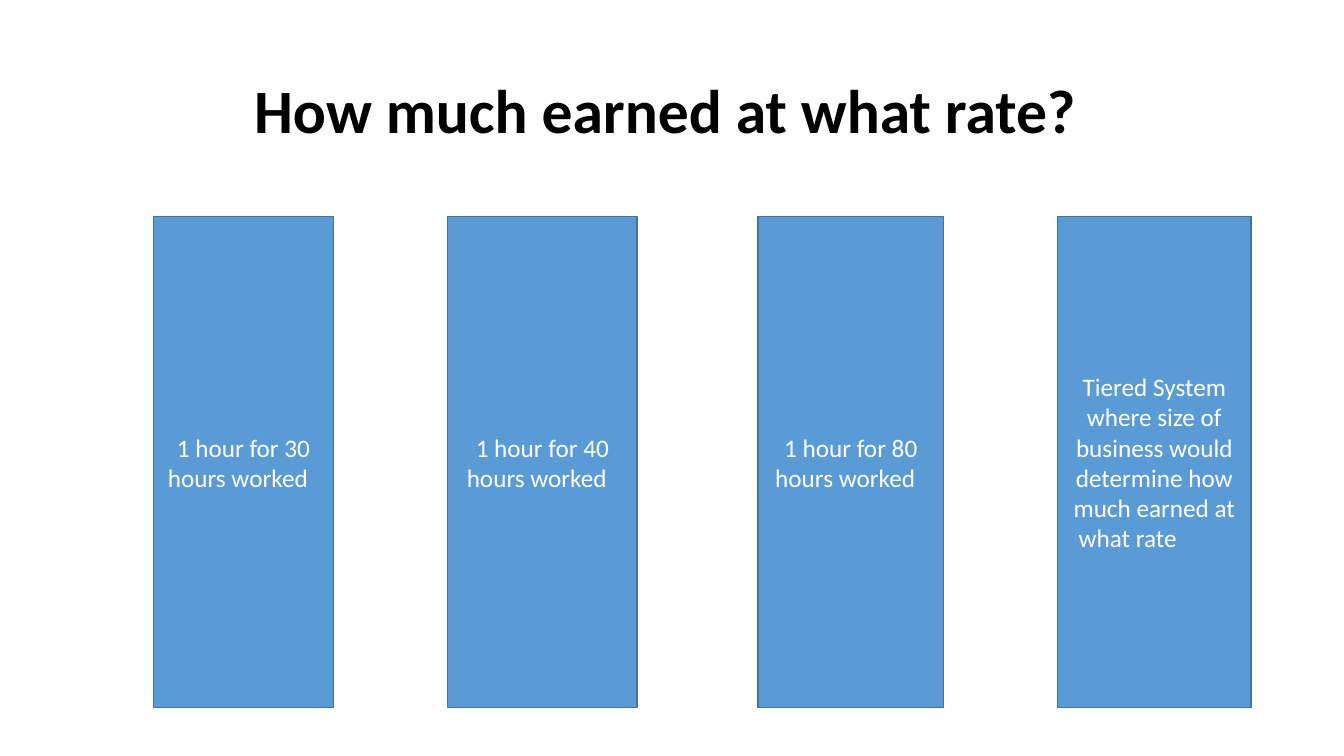
"""Build a slide comparing four rates at which leave hours are earned."""
import pptx
import pptx.dml.color
import pptx.enum.shapes
import pptx.enum.text
import pptx.util

BLACK = pptx.dml.color.RGBColor(0x00, 0x00, 0x00)
WHITE = pptx.dml.color.RGBColor(0xFF, 0xFF, 0xFF)
BLUE = pptx.dml.color.RGBColor(0x5B, 0x9B, 0xD5)
EDGE = pptx.dml.color.RGBColor(0x43, 0x73, 0x9E)

deck = pptx.Presentation()
deck.slide_width = pptx.util.Inches(13.33)
deck.slide_height = pptx.util.Inches(7.5)
slide = deck.slides.add_slide(deck.slide_layouts[6])
col = deck.slide_width / 100
row = deck.slide_height / 100


def place(left, top, width, height):
    return int(left * col), int(top * row), int(width * col), int(height * row)


def write(shape, text, size, color, bold=False):
    frame = shape.text_frame
    frame.word_wrap = True
    frame.vertical_anchor = pptx.enum.text.MSO_ANCHOR.MIDDLE
    line = frame.paragraphs[0]
    line.alignment = pptx.enum.text.PP_ALIGN.CENTER
    run = line.add_run()
    run.text = text
    run.font.name = "Calibri"
    run.font.size = pptx.util.Pt(size)
    run.font.bold = bold
    run.font.color.rgb = color
    return line


title = slide.shapes.add_textbox(*place(6.9, 5.33, 86.27, 19.33))
head = write(title, "How much earned at what rate? ", 44, BLACK, True)
head.line_spacing = 0.9

rates = [
    (11.4, 13.43, "1 hour for 30 hours worked\t"),
    (33.31, 14.1, "1 hour for 40 hours worked\t"),
    (56.41, 13.8, "1 hour for 80 hours worked\t"),
    (78.69, 14.4, "Tiered System where size of business would "
     "determine how much earned at what rate\t\t"),
]
for left, width, text in rates:
    bar = slide.shapes.add_shape(
        pptx.enum.shapes.MSO_SHAPE.FLOWCHART_PROCESS,
        *place(left, 28.67, width, 64.93))
    bar.shadow.inherit = False
    bar.fill.solid()
    bar.fill.fore_color.rgb = BLUE
    bar.line.color.rgb = EDGE
    bar.line.width = pptx.util.Pt(1)
    write(bar, text, 18, WHITE)

deck.save("out.pptx")
